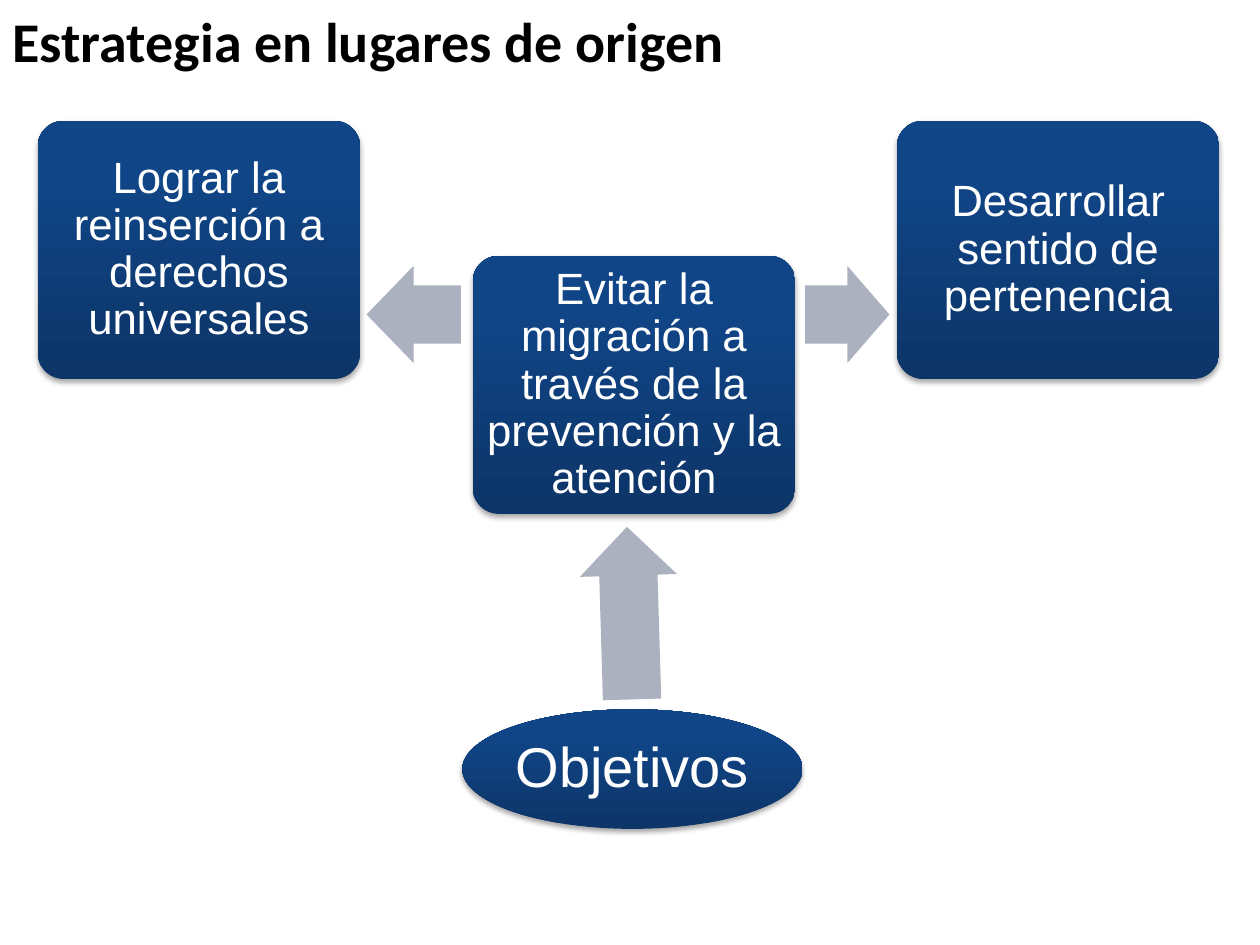
from copy import deepcopy
from dataclasses import dataclass

from lxml import etree
from pptx import Presentation
from pptx.dml.color import RGBColor
from pptx.enum.shapes import MSO_SHAPE
from pptx.enum.text import MSO_ANCHOR, PP_ALIGN
from pptx.oxml.ns import qn
from pptx.util import Cm, Pt

ELLIPSE = MSO_SHAPE.OVAL
ROUNDED = MSO_SHAPE.ROUNDED_RECTANGLE
LEFT_ARROW = MSO_SHAPE.LEFT_ARROW
TOP, MIDDLE = MSO_ANCHOR.TOP, MSO_ANCHOR.MIDDLE
LEFT, CENTER = PP_ALIGN.LEFT, PP_ALIGN.CENTER

BLACK = RGBColor(0x00, 0x00, 0x00)
WHITE = RGBColor(0xFF, 0xFF, 0xFF)
ARROW_GREY = RGBColor(0xAC, 0xB1, 0xBF)
GRADIENT = (
    (0.0, RGBColor(0x0D, 0x35, 0x68)),
    (0.8, RGBColor(0x10, 0x45, 0x87)),
    (1.0, RGBColor(0x0E, 0x45, 0x8A)),
)

GOAL_WIDTH, GOAL_HEIGHT = 6.5, 5.2
SIDE_GOAL_TOP = 2.44
ARROW_TOP, ARROW_THICKNESS = 5.36, 1.96


@dataclass(frozen=True)
class Node:
    """A labelled diagram node; lengths in centimetres."""
    text: str
    left: float
    top: float
    width: float = GOAL_WIDTH
    height: float = GOAL_HEIGHT
    preset: MSO_SHAPE = ROUNDED
    size: int = 25
    inset: float = 0.1


@dataclass(frozen=True)
class Arrow:
    """A left arrow turned by rotation; lengths in centimetres."""
    left: float
    top: float
    length: float
    rotation: float = 0


OBJECTIVES = Node("Objetivos", 9.32, 14.3, 6.86, 2.41, ELLIPSE, 32, 0.05)
REINSERTION = Node("Lograr la reinserción a derechos universales",
                   0.76, SIDE_GOAL_TOP)
BELONGING = Node("Desarrollar sentido de pertenencia", 18.08, SIDE_GOAL_TOP)
PREVENTION = Node("Evitar la migración a través de la prevención y la atención",
                  9.53, 5.16)
TO_REINSERTION = Arrow(7.39, ARROW_TOP, 1.9)
TO_BELONGING = Arrow(16.23, ARROW_TOP, 1.7, 180)
TO_PREVENTION = Arrow(10.95, 11.38, 3.48, 88.3)

# Back to front
DIAGRAM = (OBJECTIVES, TO_REINSERTION, REINSERTION, TO_BELONGING, BELONGING,
           TO_PREVENTION, PREVENTION)


def fill_gradient(shape) -> None:
    shape.fill.gradient()
    shape.fill.gradient_angle = 90
    stop_list = shape._element.spPr.find(qn("a:gradFill")).find(qn("a:gsLst"))
    stop_list.append(deepcopy(stop_list[-1]))
    for stop, (position, color) in zip(shape.fill.gradient_stops, GRADIENT):
        stop.position = position
        stop.color.rgb = color


def add_soft_shadow(shape) -> None:
    effects = shape._element.spPr.find(qn("a:effectLst"))
    shadow = etree.SubElement(
        effects, qn("a:outerShdw"), blurRad=str(Pt(3.1)), dist=str(Pt(1.8)),
        dir="5400000", rotWithShape="0")
    color = etree.SubElement(shadow, qn("a:srgbClr"), val="000000")
    etree.SubElement(color, qn("a:alpha"), val="35000")


def draw_node(slide, node: Node) -> None:
    shape = slide.shapes.add_shape(node.preset, Cm(node.left), Cm(node.top),
                                   Cm(node.width), Cm(node.height))
    if node.preset == ROUNDED:
        shape.adjustments[0] = 0.1
    fill_gradient(shape)
    shape.line.fill.background()
    shape.shadow.inherit = False
    add_soft_shadow(shape)

    frame = shape.text_frame
    frame.text = node.text
    frame.word_wrap = True
    frame.vertical_anchor = MIDDLE
    frame.margin_left = frame.margin_right = Cm(node.inset)
    frame.margin_top = frame.margin_bottom = Cm(node.inset)
    label = frame.paragraphs[0]
    label.alignment = CENTER
    label.line_spacing = 0.9
    font = label.runs[0].font
    font.name, font.size = "Arial", Pt(node.size)
    font.color.rgb = WHITE


def draw_arrow(slide, arrow: Arrow) -> None:
    shape = slide.shapes.add_shape(LEFT_ARROW, Cm(arrow.left), Cm(arrow.top),
                                   Cm(arrow.length), Cm(ARROW_THICKNESS))
    shape.adjustments[0] = 0.6
    shape.adjustments[1] = 0.5
    shape.rotation = arrow.rotation
    shape.fill.solid()
    shape.fill.fore_color.rgb = ARROW_GREY
    shape.line.fill.background()
    shape.shadow.inherit = False


def set_title(slide, text: str) -> None:
    title = slide.shapes.title
    title.left, title.top = Cm(0), Cm(0)
    title.width, title.height = Cm(21.64), Cm(2.77)
    title.text_frame.text = text
    title.text_frame.vertical_anchor = TOP
    heading = title.text_frame.paragraphs[0]
    heading.alignment = LEFT
    font = heading.runs[0].font
    font.name, font.size, font.bold = "Calibri", Pt(32), True
    font.color.rgb = BLACK


def main() -> None:
    presentation = Presentation()
    presentation.slide_width, presentation.slide_height = Cm(25.4), Cm(19.05)
    slide = presentation.slides.add_slide(presentation.slide_layouts[5])

    set_title(slide, "Estrategia en lugares de origen")

    # Goals and the arrows leading to them
    for part in DIAGRAM:
        if isinstance(part, Node):
            draw_node(slide, part)
        else:
            draw_arrow(slide, part)

    presentation.save("out.pptx")


if __name__ == "__main__":
    main()
